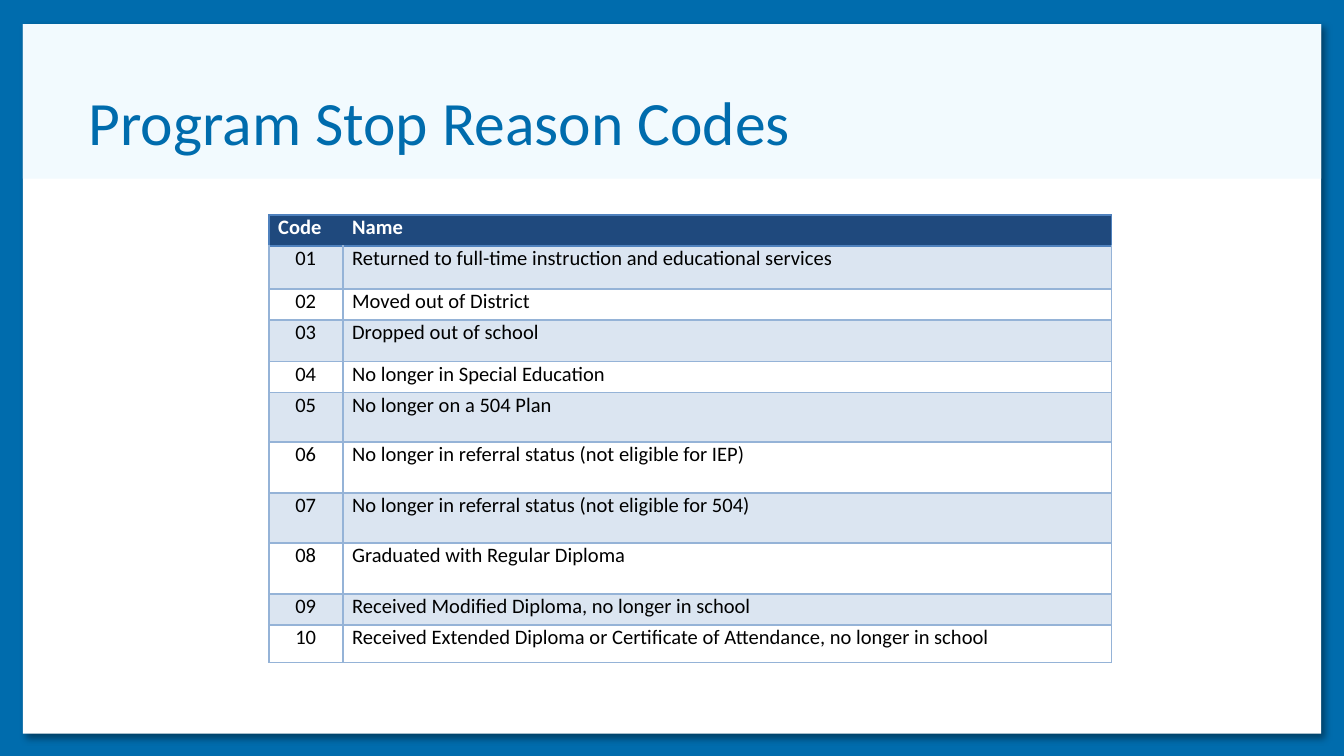
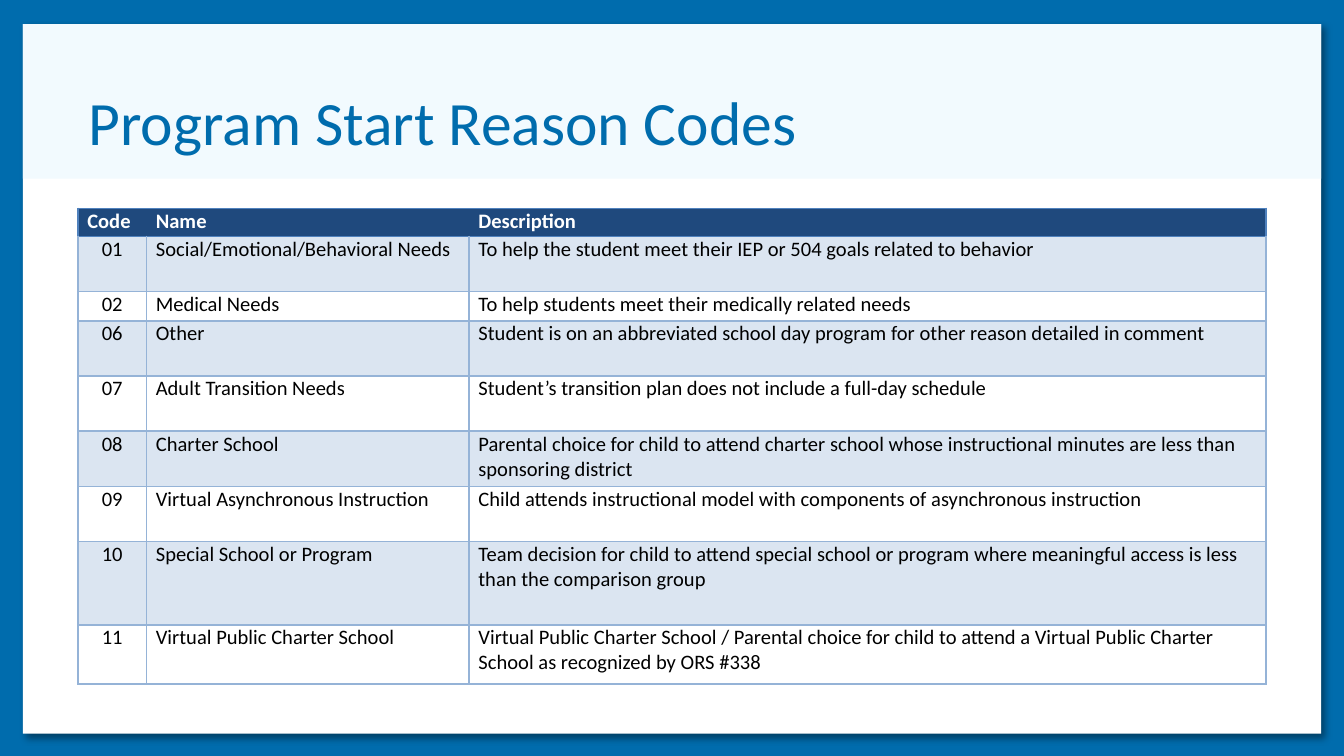
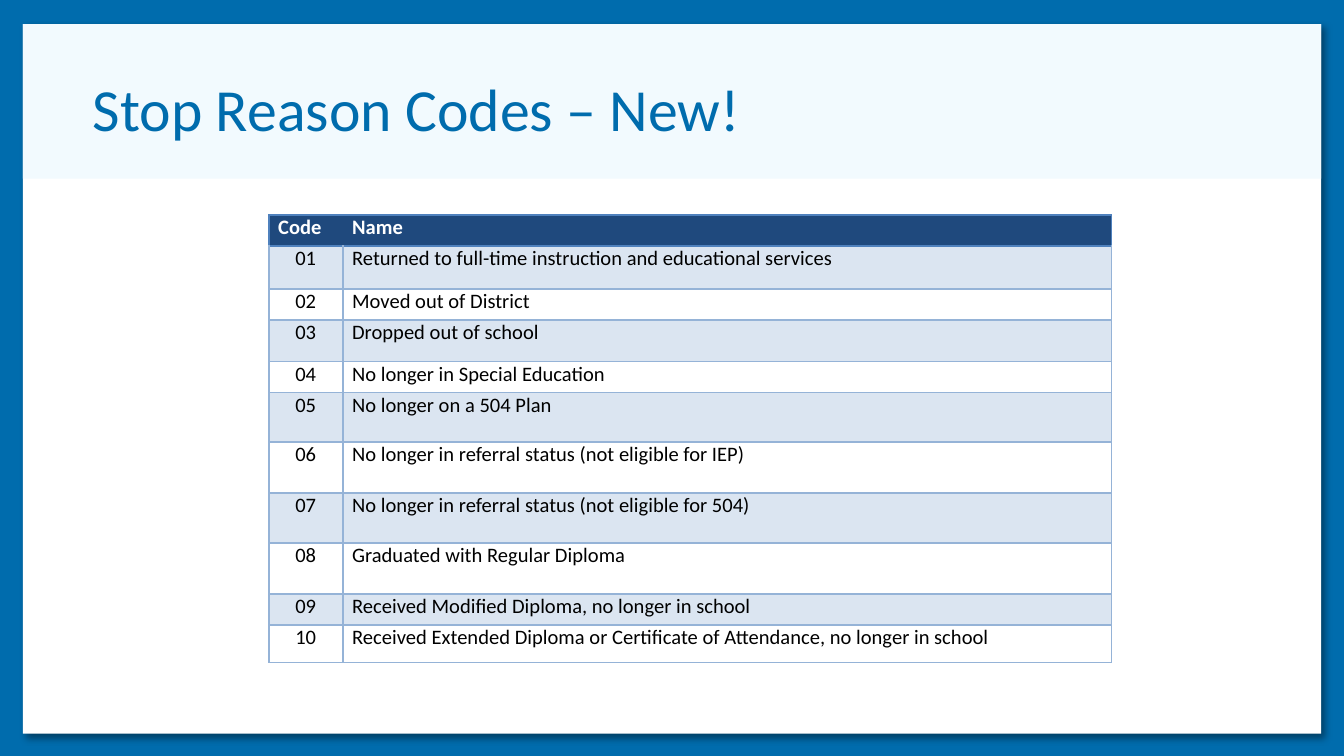
import lxml.etree
import pptx
import pptx.dml.color
import pptx.enum.shapes
import pptx.enum.text
import pptx.oxml
import pptx.oxml.ns
import pptx.util

Inches, Pt = pptx.util.Inches, pptx.util.Pt
RGBColor = pptx.dml.color.RGBColor
PP_ALIGN = pptx.enum.text.PP_ALIGN
MSO_ANCHOR = pptx.enum.text.MSO_ANCHOR
qn = pptx.oxml.ns.qn

# Shared style
BLUE = RGBColor(0x00, 0x6C, 0xAD)
PALE_BLUE = RGBColor(0xF2, 0xFA, 0xFE)
WHITE = RGBColor(0xFF, 0xFF, 0xFF)
BLACK = RGBColor(0x00, 0x00, 0x00)
NAVY = RGBColor(0x1F, 0x49, 0x7D)
STRIPE = RGBColor(0xDB, 0xE5, 0xF1)
HEAD_LINE = RGBColor(0x4F, 0x81, 0xBD)
GRID_LINE = RGBColor(0x95, 0xB3, 0xD7)
FONT = "Calibri"
NO_TABLE_STYLE = "{2D5ABB26-0587-4C30-8999-92F81FD0307C}"

# Content
STOP_CODES = [
    ("Code", "Name"),
    ("01", "Returned to full-time instruction and educational services"),
    ("02", "Moved out of District"),
    ("03", "Dropped out of school"),
    ("04", "No longer in Special Education"),
    ("05", "No longer on a 504 Plan"),
    ("06", "No longer in referral status (not eligible for IEP)"),
    ("07", "No longer in referral status (not eligible for 504)"),
    ("08", "Graduated with Regular Diploma"),
    ("09", "Received Modified Diploma, no longer in school"),
    ("10", "Received Extended Diploma or Certificate of Attendance, no longer in school"),
]
STOP_BOX = (2, 1.6, 6.26, 3.32)
STOP_COLS = [0.55, 5.72]
STOP_ROWS = [0.23, 0.32, 0.23, 0.31, 0.23, 0.37, 0.38, 0.37, 0.38, 0.23, 0.28]

START_CODES = [
    ("Code", "Name", "Description"),
    ("01", "Social/Emotional/Behavioral Needs",
     "To help the student meet their IEP or 504 goals related to behavior"),
    ("02", "Medical Needs", "To help students meet their medically related needs"),
    ("06", "Other",
     "Student is on an abbreviated school day program for other reason detailed in comment"),
    ("07", "Adult Transition Needs",
     "Student’s transition plan does not include a full-day schedule"),
    ("08", "Charter School",
     "Parental choice for child to attend charter school whose instructional minutes "
     "are less than sponsoring district"),
    ("09", "Virtual Asynchronous Instruction",
     "Child attends instructional model with components of asynchronous instruction"),
    ("10", "Special School or Program",
     "Team decision for child to attend special school or program where meaningful "
     "access is less than the comparison group"),
    ("11", "Virtual Public Charter School",
     "Virtual Public Charter School / Parental choice for child to attend a Virtual "
     "Public Charter School as recognized by ORS #338"),
]
START_BOX = (0.58, 1.55, 8.85, 3.54)
START_COLS = [0.51, 2.4, 5.93]
START_ROWS = [0.21, 0.41, 0.22, 0.41, 0.41, 0.41, 0.41, 0.62, 0.44]


def add_panel(s, box, color):
    sp = s.shapes.add_shape(pptx.enum.shapes.MSO_SHAPE.RECTANGLE, *map(Inches, box))
    sp.shadow.inherit = False
    sp.fill.solid()
    sp.fill.fore_color.rgb = color
    sp.line.fill.background()
    return sp


def add_shadow(sp):
    effects = sp.element.spPr.find(qn("a:effectLst"))
    shadow = lxml.etree.SubElement(
        effects, qn("a:outerShdw"), blurRad=str(Pt(4)), dist=str(Pt(3)),
        dir=str(45 * 60000), algn="tl", rotWithShape="0")
    color = lxml.etree.SubElement(shadow, qn("a:srgbClr"), val=str(BLACK))
    lxml.etree.SubElement(color, qn("a:alpha"), val="40000")


def style_layout(layout, s, box):
    """Give the layout its blue frame, white page and title band, drawn by way of s."""
    for ph in list(layout.placeholders):
        if ph.placeholder_format.idx != 0:
            ph.element.getparent().remove(ph.element)
    layout.background.fill.solid()
    layout.background.fill.fore_color.rgb = BLUE
    left, top, width, height = box
    page = add_panel(s, box, WHITE)
    add_shadow(page)
    band = add_panel(s, (left, top, width, 1.15), PALE_BLUE)
    for i, sp in enumerate((page, band)):
        layout.shapes.element.insert(2 + i, sp.element)


def set_margins(frame, x, y):
    frame.margin_left = frame.margin_right = Inches(x)
    frame.margin_top = frame.margin_bottom = Inches(y)


def set_title(s, text, width=8.85, size=33, anchor=MSO_ANCHOR.BOTTOM,
              margins=(0.07, 0.04), spacing=0.9):
    sp = s.shapes.title
    sp.left, sp.top, sp.width, sp.height = map(Inches, (0.59, 0.38, width, 0.84))
    tf = sp.text_frame
    tf.word_wrap = True
    tf.auto_size = pptx.enum.text.MSO_AUTO_SIZE.NONE
    tf.vertical_anchor = anchor
    set_margins(tf, *margins)
    p = tf.paragraphs[0]
    p.alignment = PP_ALIGN.LEFT
    p.line_spacing = spacing
    add_run(p, text, size, BLUE)


def add_run(p, text, size, color, bold=False):
    r = p.add_run()
    r.text = text
    r.font.name = FONT
    r.font.size = Pt(size)
    r.font.bold = bold
    r.font.color.rgb = color


def set_borders(cell, colors):
    """Draw 1 pt borders; colors maps the sides L, R, T and B, in that order."""
    tc_pr = cell._tc.get_or_add_tcPr()
    for side, color in colors.items():
        ln = lxml.etree.SubElement(tc_pr, qn("a:ln" + side), w=str(Pt(1)))
        fill = lxml.etree.SubElement(ln, qn("a:solidFill"))
        lxml.etree.SubElement(fill, qn("a:srgbClr"), val=str(color))


def fill_cell(cell, text, row, col, last_col, head_spacing):
    head = row == 0
    # Borders: the header has none between its cells
    if head:
        sides = {"L": col == 0, "R": col == last_col, "T": True, "B": True}
        set_borders(cell, {side: HEAD_LINE for side, on in sides.items() if on})
    else:
        set_borders(cell, {"L": GRID_LINE, "R": GRID_LINE,
                           "T": HEAD_LINE if row == 1 else GRID_LINE, "B": GRID_LINE})
    # Fill: stripes on odd rows
    if head or row % 2:
        cell.fill.solid()
        cell.fill.fore_color.rgb = NAVY if head else STRIPE
    else:
        cell.fill.background()
    # Text
    set_margins(cell, 0.07, 0)
    p = cell.text_frame.paragraphs[0]
    before, after = head_spacing if head else (1, 2)
    p.space_before, p.space_after = Pt(before), Pt(after)
    p.alignment = PP_ALIGN.CENTER if col == 0 and not head else PP_ALIGN.LEFT
    add_run(p, text, 11, WHITE if head else BLACK, bold=head)


def add_code_table(s, box, codes, cols, rows, head_spacing):
    table = s.shapes.add_table(len(rows), len(cols), *map(Inches, box)).table
    table._tbl.tblPr.find(qn("a:tableStyleId")).text = NO_TABLE_STYLE
    table.first_row = True
    table.horz_banding = False
    for column, width in zip(table.columns, cols):
        column.width = Inches(width)
    for row, height in zip(table.rows, rows):
        row.height = Inches(height)
    for i, texts in enumerate(codes):
        for j, text in enumerate(texts):
            fill_cell(table.cell(i, j), text, i, j, len(cols) - 1, head_spacing)


def add_stop_table(s):
    add_code_table(s, STOP_BOX, STOP_CODES, STOP_COLS, STOP_ROWS, (2, 0))


def main():
    prs = pptx.Presentation()
    # 16:9 page
    prs.slide_width = Inches(10)
    prs.slide_height = Inches(10) * 9 // 16
    layout = prs.slide_layouts[5]

    # Program stop codes
    s = prs.slides.add_slide(layout)
    style_layout(layout, s, (0.17, 0.18, 9.66, 5.28))
    set_title(s, "Program Stop Reason Codes")
    add_stop_table(s)

    # Program start codes
    s = prs.slides.add_slide(layout)
    set_title(s, "Program Start Reason Codes")
    add_code_table(s, START_BOX, START_CODES, START_COLS, START_ROWS, (1, 2))

    # New stop codes
    s = prs.slides.add_slide(layout)
    set_title(s, "Stop Reason Codes – New!", width=9.17, size=32,
              anchor=MSO_ANCHOR.MIDDLE, margins=(0.1, 0.05), spacing=1.0)
    add_stop_table(s)

    prs.save("out.pptx")


if __name__ == "__main__":
    main()
